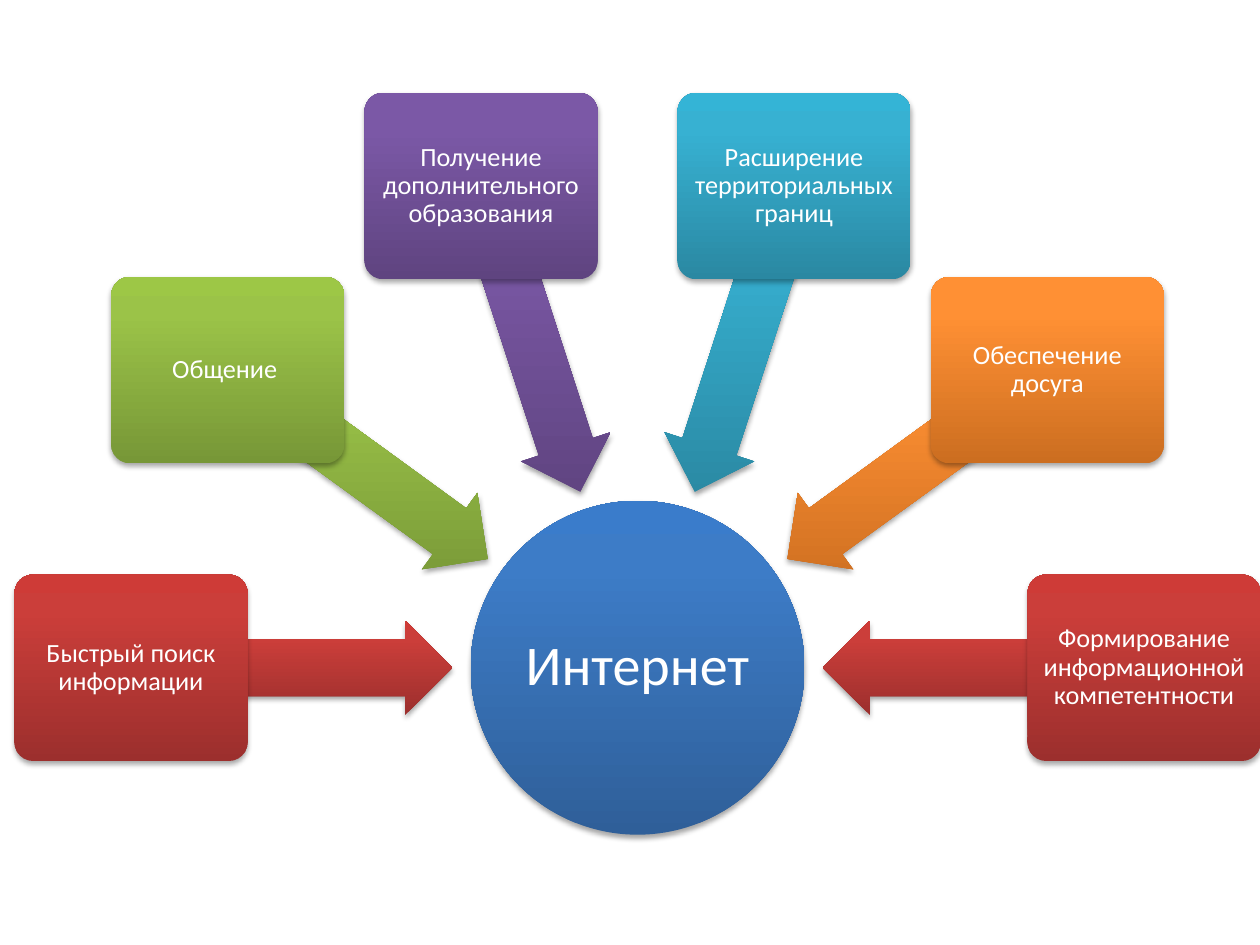
from math import cos, radians, sin

from lxml import etree
from pptx import Presentation
from pptx.dml.color import RGBColor
from pptx.enum.shapes import MSO_SHAPE
from pptx.enum.text import MSO_ANCHOR, PP_ALIGN
from pptx.oxml import parse_xml
from pptx.oxml.ns import nsdecls, qn
from pptx.util import Inches, Pt

CIRCLE, CARD, ARROW = MSO_SHAPE.OVAL, MSO_SHAPE.ROUNDED_RECTANGLE, MSO_SHAPE.LEFT_ARROW
MIDDLE, CENTER = MSO_ANCHOR.MIDDLE, PP_ALIGN.CENTER

HUB = "Интернет"
BENEFITS = [  # clockwise from the left: label, colour name
    ("Быстрый поиск информации", "red"),
    ("Общение ", "green"),
    ("Получение дополнительного образования", "purple"),
    ("Расширение территориальных границ", "teal"),
    ("Обеспечение досуга", "orange"),
    ("Формирование информационной компетентности", "red"),
]

THEME = {
    "font": "Calibri",
    "text": RGBColor.from_string("FFFFFF"),
    "hub_size": Pt(32),
    "card_size": Pt(15),
    "stops": (0, 80, 100),  # bottom to top, percent
    "gradients": {
        "blue": ("2F5F99", "3D7CC7", "3A7CCB"),
        "red": ("9C2F2D", "CB3E3A", "CE3B37"),
        "green": ("779737", "9BC348", "9DC746"),
        "purple": ("5F4480", "7B58A6", "7C57A8"),
        "teal": ("2A88A2", "37B1D2", "34B4D6"),
        "orange": ("CC6E20", "FF9034", "FF9136"),
    },
}

CENTER_X, CENTER_Y = 5.06, 5.3
HUB_DIAMETER = 2.65
CARD_WIDTH, CARD_HEIGHT, CARD_RADIUS = 1.85, 1.48, 4.02
ARROW_LENGTH, ARROW_HEIGHT, ARROW_RADIUS = 2.54, 0.75, 2.74
FIRST_ANGLE, LAST_ANGLE = 180, 360


def apply_gradient(shape, colors):
    """Fill with a vertical gradient that stays upright when the shape turns."""
    shape.fill.gradient()
    gradient = shape._element.spPr.find(qn("a:gradFill"))
    stops = "".join(
        f'<a:gs pos="{stop * 1000}"><a:srgbClr val="{color}"/></a:gs>'
        for stop, color in zip(THEME["stops"], colors)
    )
    gradient.getparent().replace(gradient, parse_xml(
        f'<a:gradFill {nsdecls("a")} rotWithShape="0"><a:gsLst>{stops}</a:gsLst>'
        '<a:lin ang="16200000" scaled="0"/></a:gradFill>'
    ))


def apply_shadow(shape):
    shape.shadow.inherit = False
    effects = shape._element.spPr.find(qn("a:effectLst"))
    shadow = etree.SubElement(
        effects, qn("a:outerShdw"), blurRad=str(Pt(3.1)), dist=str(Pt(1.8)),
        dir="5400000", rotWithShape="0",
    )
    black = etree.SubElement(shadow, qn("a:srgbClr"), val="000000")
    etree.SubElement(black, qn("a:alpha"), val="35000")


def add_part(slide, kind, angle, radius, width, height, color, adjustments=()):
    """Add a shape centred at a polar position around the hub."""
    x = CENTER_X + radius * cos(radians(angle))
    y = CENTER_Y + radius * sin(radians(angle))
    part = slide.shapes.add_shape(
        kind, Inches(x - width / 2), Inches(y - height / 2), Inches(width), Inches(height)
    )
    for index, value in enumerate(adjustments):
        part.adjustments[index] = value
    apply_gradient(part, THEME["gradients"][color])
    part.line.fill.background()
    apply_shadow(part)
    return part


def add_label(part, label, size, inset):
    frame = part.text_frame
    frame_format = {"word_wrap": True, "vertical_anchor": MIDDLE}
    for side in ("left", "top", "right", "bottom"):
        frame_format[f"margin_{side}"] = Inches(inset)
    for name, value in frame_format.items():
        setattr(frame, name, value)
    paragraph = frame.paragraphs[0]
    paragraph.alignment = CENTER
    paragraph.line_spacing = 0.9
    run = paragraph.add_run()
    run.text = label
    for name, value in {"name": THEME["font"], "size": size}.items():
        setattr(run.font, name, value)
    run.font.color.rgb = THEME["text"]


def main():
    deck = Presentation()
    deck.slide_width, deck.slide_height = Inches(10), Inches(7.5)
    slide = deck.slides.add_slide(deck.slide_layouts[6])

    hub = add_part(slide, CIRCLE, 0, 0, HUB_DIAMETER, HUB_DIAMETER, "blue")
    add_label(hub, HUB, THEME["hub_size"], 0.02)

    step = (LAST_ANGLE - FIRST_ANGLE) / (len(BENEFITS) - 1)
    for index, (label, color) in enumerate(BENEFITS):
        angle = FIRST_ANGLE + index * step
        arrow = add_part(slide, ARROW, angle, ARROW_RADIUS, ARROW_LENGTH, ARROW_HEIGHT,
                         color, (0.6, 0.5))
        arrow.rotation = angle % 360
        card = add_part(slide, CARD, angle, CARD_RADIUS, CARD_WIDTH, CARD_HEIGHT,
                        color, (0.1,))
        add_label(card, label, THEME["card_size"], 0.03)

    deck.save("out.pptx")


if __name__ == "__main__":
    main()
